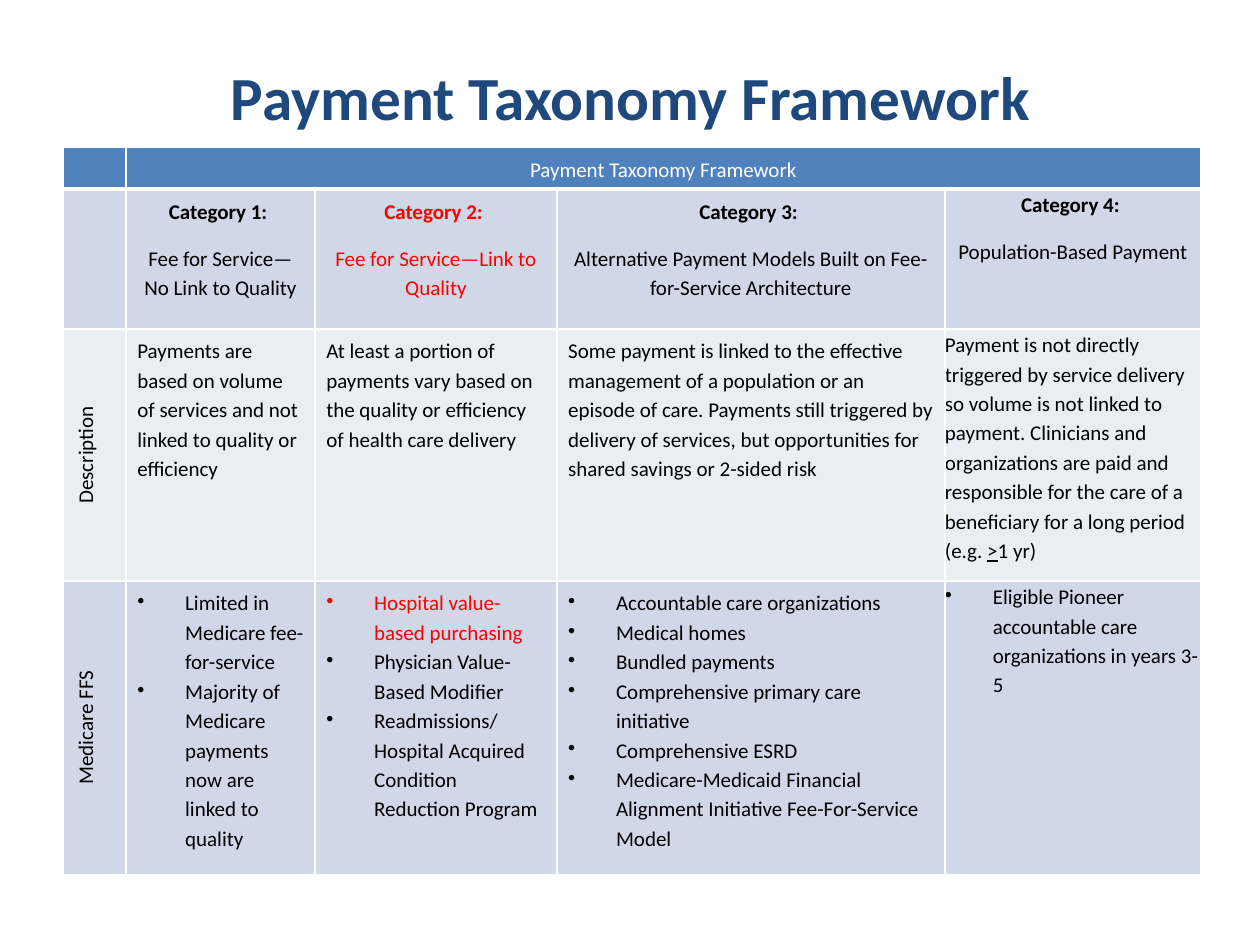
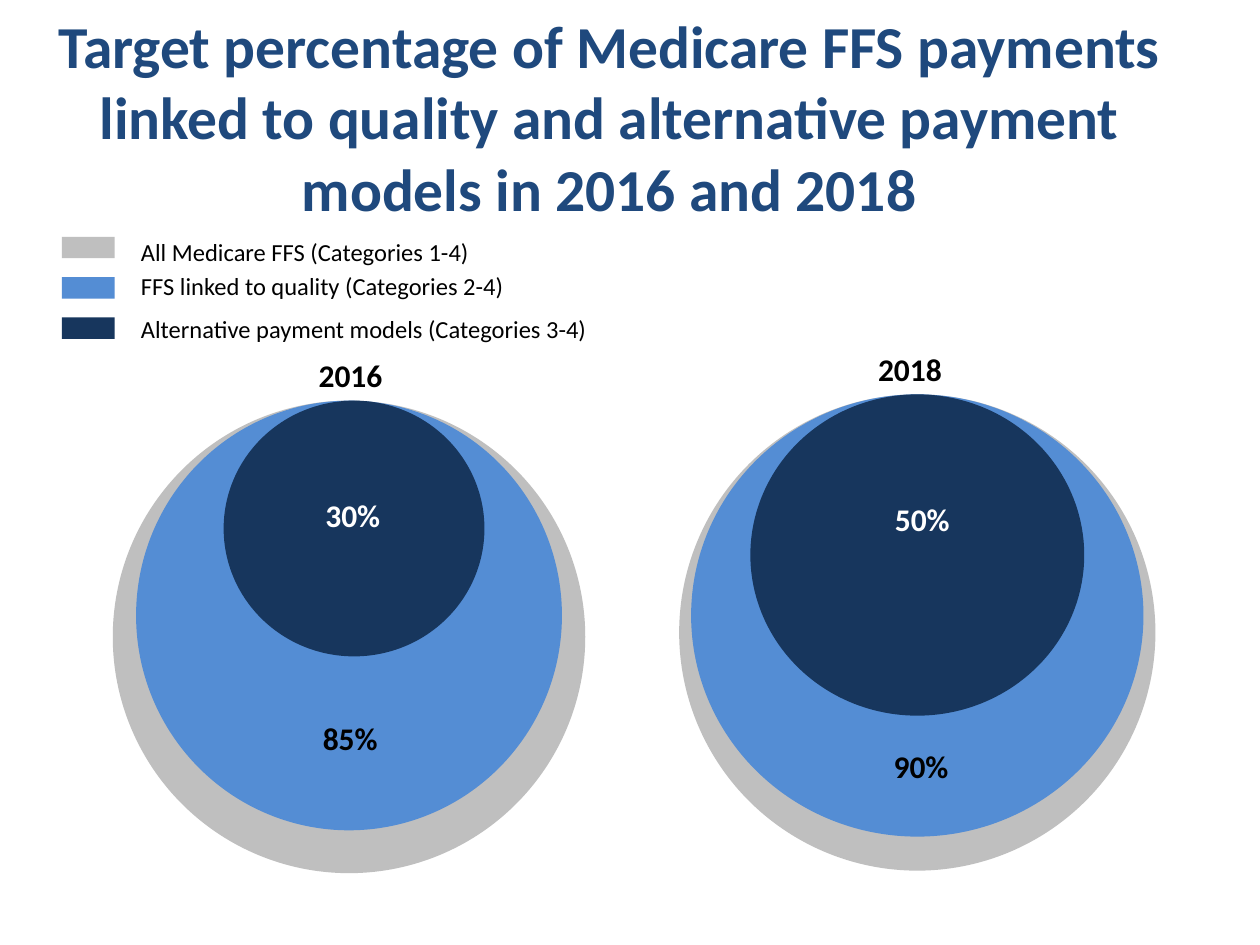
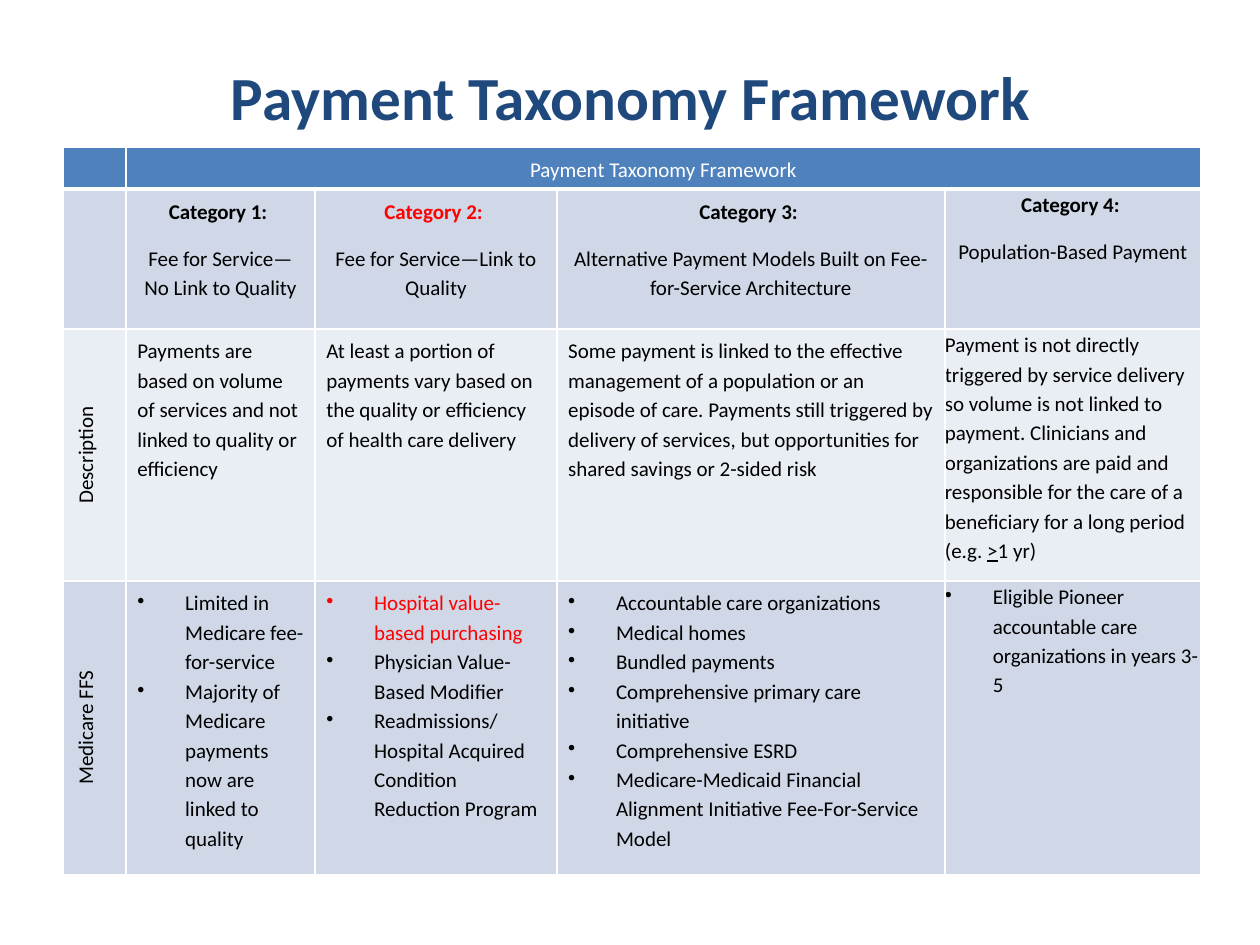
from dataclasses import dataclass, field
from typing import Any

from lxml.etree import SubElement
from pptx import Presentation
from pptx.dml.color import RGBColor
from pptx.enum.shapes import MSO_SHAPE
from pptx.enum.text import MSO_ANCHOR, PP_ALIGN
from pptx.oxml import parse_xml
from pptx.oxml.ns import nsdecls, qn
from pptx.util import Inches, Pt

HUES = {
    "title": "1F497D", "head": "4F81BD", "band": "D0D8E8", "pale": "E9EDF4",
    "white": "FFFFFF", "black": "000000", "red": "FF0000",
    "gray": "BFBFBF", "blue": "548DD4", "navy": "17365D",
}
FACE = "Calibri"
CENTER = {"alignment": PP_ALIGN.CENTER}
LOOSE = {"line_spacing": 1.15, "space_after": Pt(10)}
TIGHT = {"line_spacing": 1.15}
HANG = 0.38
COLS = (0.5, 1.5, 1.92, 3.08, 2.03)
ROWS = (0.31, 1.11, 2, 2.33)
FILLS = ("head", "band", "pale", "band")


@dataclass
class Run:
    text: str
    size: float = 12
    hue: str = "black"
    bold: bool = False
    line: bool = False


@dataclass
class Para:
    runs: list[Run]
    form: dict[str, Any] = field(default_factory=dict)
    shift: float = 0
    dot: bool = False


@dataclass
class Label:
    left: float
    top: float
    width: float
    height: float
    run: Run
    form: dict[str, Any] = field(default_factory=dict)
    frame: dict[str, Any] = field(default_factory=lambda: {"word_wrap": True})


@dataclass
class Disk:
    hue: str
    mid: float
    top: float
    width: float
    height: float


@dataclass
class Group:
    name: str
    brief: str
    about: list[Run]
    points: list[str]
    hue: str = "black"
    shift: float = 0
    inset: tuple[float, float] = (0.09, 0.05)


GROUPS = (
    Group("Category 1: ", "Fee for Service—No Link to Quality",
          [Run("Payments are based on volume of services and not linked to "
               "quality or efficiency")],
          ["Limited in Medicare fee-for-service",
           "Majority of Medicare payments now are linked to quality"],
          shift=-0.19),
    Group("Category 2: ", "Fee for Service—Link to Quality",
          [Run("At least a portion of payments vary based on the quality or "
               "efficiency of health care delivery")],
          ["Hospital value-based purchasing",
           "Physician Value-Based Modifier",
           "Readmissions/Hospital Acquired Condition Reduction Program"],
          hue="red", shift=-0.12),
    Group("Category 3: ",
          "Alternative Payment Models Built on Fee-for-Service Architecture",
          [Run("Some payment is linked to the effective management of a "
               "population or an episode of care. Payments still triggered by "
               "delivery of services, but opportunities for shared savings or "
               "2-sided risk")],
          ["Accountable care organizations", "Medical homes",
           "Bundled payments", "Comprehensive primary care initiative",
           "Comprehensive ESRD",
           "Medicare-Medicaid Financial Alignment Initiative "
           "Fee-For-Service Model"]),
    Group("Category 4: ", "Population-Based Payment",
          [Run("Payment is not directly triggered by service delivery so "
               "volume is not linked to payment. Clinicians and organizations "
               "are paid and responsible for the care of a beneficiary for a "
               "long period (e.g. "),
           Run(">", line=True), Run("1 yr)")],
          ["Eligible Pioneer accountable care organizations in years 3-5"],
          inset=(0, 0)),
)
DISKS = (
    Disk("gray", 2.77, 3.18, 3.75, 3.75),
    Disk("blue", 2.77, 3.18, 3.38, 3.41),
    Disk("navy", 2.81, 3.18, 2.07, 2.03),
    Disk("gray", 7.28, 3.13, 3.78, 3.78),
    Disk("blue", 7.28, 3.13, 3.59, 3.51),
    Disk("navy", 7.28, 3.13, 2.65, 2.55),
)
KEYS = (
    ("gray", 1.83, 2.83, "All Medicare FFS (Categories 1-4)"),
    ("blue", 2.1, 3.11, "FFS linked to quality (Categories 2-4)"),
    ("navy", 2.44, 3.78, "Alternative payment models (Categories 3-4)"),
)
YEARS = (("2016", 2.43, 2.78), ("2018", 6.87, 2.73))
SHARES = (
    ("30%", 2.43, 3.89, "white"), ("85%", 2.41, 5.66, "black"),
    ("50%", 6.95, 3.92, "white"), ("90%", 6.94, 5.88, "black"),
)


def color(hue: str) -> RGBColor:
    return RGBColor.from_string(HUES[hue])


def apply(thing: Any, form: dict[str, Any]) -> None:
    for name, value in form.items():
        setattr(thing, name, value)


def write(frame: Any, paras: list[Para]) -> None:
    for place, para in enumerate(paras):
        block = frame.add_paragraph() if place else frame.paragraphs[0]
        apply(block, para.form)
        props = block._p.get_or_add_pPr()
        if para.dot:
            props.set("marL", str(Inches(HANG)))
            props.set("indent", str(-Inches(HANG)))
            SubElement(props, qn("a:buChar"), char="•")
        elif para.shift:
            props.set("indent", str(Inches(para.shift)))
        for part in para.runs:
            run = block.add_run()
            run.text = part.text
            apply(run.font, {"name": FACE, "size": Pt(part.size),
                             "bold": part.bold, "underline": part.line})
            run.font.color.rgb = color(part.hue)


def draw_label(slide: Any, label: Label) -> None:
    box = slide.shapes.add_textbox(
        Inches(label.left), Inches(label.top),
        Inches(label.width), Inches(label.height))
    apply(box.text_frame, label.frame)
    write(box.text_frame, [Para([label.run], label.form)])


def draw_title(slide: Any, text: str, left: float, top: float,
               size: float) -> None:
    draw_label(slide, Label(
        left, top, 9.67, 1.18, Run(text, size, "title", True), CENTER,
        {"word_wrap": True, "vertical_anchor": MSO_ANCHOR.MIDDLE}))


def draw_shape(slide: Any, kind: MSO_SHAPE, hue: str, left: float, top: float,
               width: float, height: float) -> None:
    shape = slide.shapes.add_shape(
        kind, Inches(left), Inches(top), Inches(width), Inches(height))
    shape.shadow.inherit = False
    shape.fill.solid()
    shape.fill.fore_color.rgb = color(hue)
    shape.line.fill.background()


def edge(cell: Any, base: float) -> None:
    props = cell._tc.get_or_add_tcPr()
    for place, side in enumerate("LRTB"):
        width = Pt(base if side == "B" else 1)
        props.insert(place, parse_xml(
            f'<a:ln{side} {nsdecls("a")} w="{width}"><a:solidFill>'
            f'<a:srgbClr val="{HUES["white"]}"/></a:solidFill></a:ln{side}>'))


def fill_cell(cell: Any, paras: list[Para],
              inset: tuple[float, float] = (0.09, 0.05)) -> None:
    side, end = map(Inches, inset)
    apply(cell, {"margin_left": side, "margin_right": side,
                 "margin_top": end, "margin_bottom": end})
    write(cell.text_frame, paras)


def draw_table(slide: Any, brief_hue: str) -> None:
    grid = slide.shapes.add_table(
        len(ROWS), len(COLS), Inches(0.5), Inches(1.17),
        Inches(sum(COLS)), Inches(sum(ROWS))).table
    apply(grid, {"first_row": False, "horz_banding": False})
    for col, width in zip(grid.columns, COLS):
        col.width = Inches(width)
    for row, height, hue in zip(grid.rows, ROWS, FILLS):
        row.height = Inches(height)
        for cell in row.cells:
            cell.fill.solid()
            cell.fill.fore_color.rgb = color(hue)
            edge(cell, 3 if hue == "head" else 1)
            SubElement(cell.text_frame.paragraphs[0]._p,
                       qn("a:endParaRPr"), sz="1200")
    grid.cell(0, 1).merge(grid.cell(0, len(COLS) - 1))
    mid = CENTER | LOOSE
    fill_cell(grid.cell(0, 1),
              [Para([Run("Payment Taxonomy Framework", hue="white")], mid)])
    for row, name in enumerate(("Description", "Medicare FFS"), 2):
        cell = grid.cell(row, 0)
        fill_cell(cell, [Para([Run(name)], mid)])
        cell._tc.get_or_add_tcPr().set("vert", "vert270")
    for col, group in enumerate(GROUPS, 1):
        hue = brief_hue if group.hue == "red" else "black"
        points = [Run(text) for text in group.points]
        points[0].hue = group.hue
        stacks = (
            [Para([Run(group.name, hue=group.hue, bold=True)], mid,
                  group.shift),
             Para([Run(group.brief, hue=hue)], mid)],
            [Para(group.about, LOOSE)],
            [Para([point], TIGHT, dot=True) for point in points],
        )
        for row, paras in enumerate(stacks, 1):
            fill_cell(grid.cell(row, col), paras, group.inset)


def add_frame(deck: Any, brief_hue: str) -> None:
    slide = deck.slides.add_slide(deck.slide_layouts[6])
    draw_title(slide, "Payment Taxonomy Framework", 0.17, 0.17, 35)
    draw_table(slide, brief_hue)


def add_goals(deck: Any) -> None:
    slide = deck.slides.add_slide(deck.slide_layouts[6])
    draw_title(slide, "Target percentage of Medicare FFS payments linked to "
               "quality and alternative payment models in 2016 and 2018",
               0, 0.33, 34)
    for disk in DISKS:
        draw_shape(slide, MSO_SHAPE.OVAL, disk.hue, disk.mid - disk.width / 2,
                   disk.top, disk.width, disk.height)
    for place, (hue, top, width, text) in enumerate(KEYS):
        draw_shape(slide, MSO_SHAPE.RECTANGLE, hue,
                   0.49, 1.88 + 0.32 * place, 0.42, 0.17)
        draw_label(slide, Label(1.02, top, width, 0.34, Run(text, 14),
                                frame={"word_wrap": False}))
    for text, left, top in YEARS:
        draw_label(slide, Label(left, top, 0.82, 0.4,
                                Run(text, 18, bold=True)))
    for text, left, top, hue in SHARES:
        draw_label(slide, Label(left, top, 0.74, 0.4,
                                Run(text, 18, hue, True), CENTER))


def main() -> None:
    deck = Presentation()
    apply(deck, {"slide_width": Inches(10), "slide_height": Inches(7.5)})
    add_frame(deck, "red")
    add_goals(deck)
    add_frame(deck, "black")
    deck.save("out.pptx")


if __name__ == "__main__":
    main()
